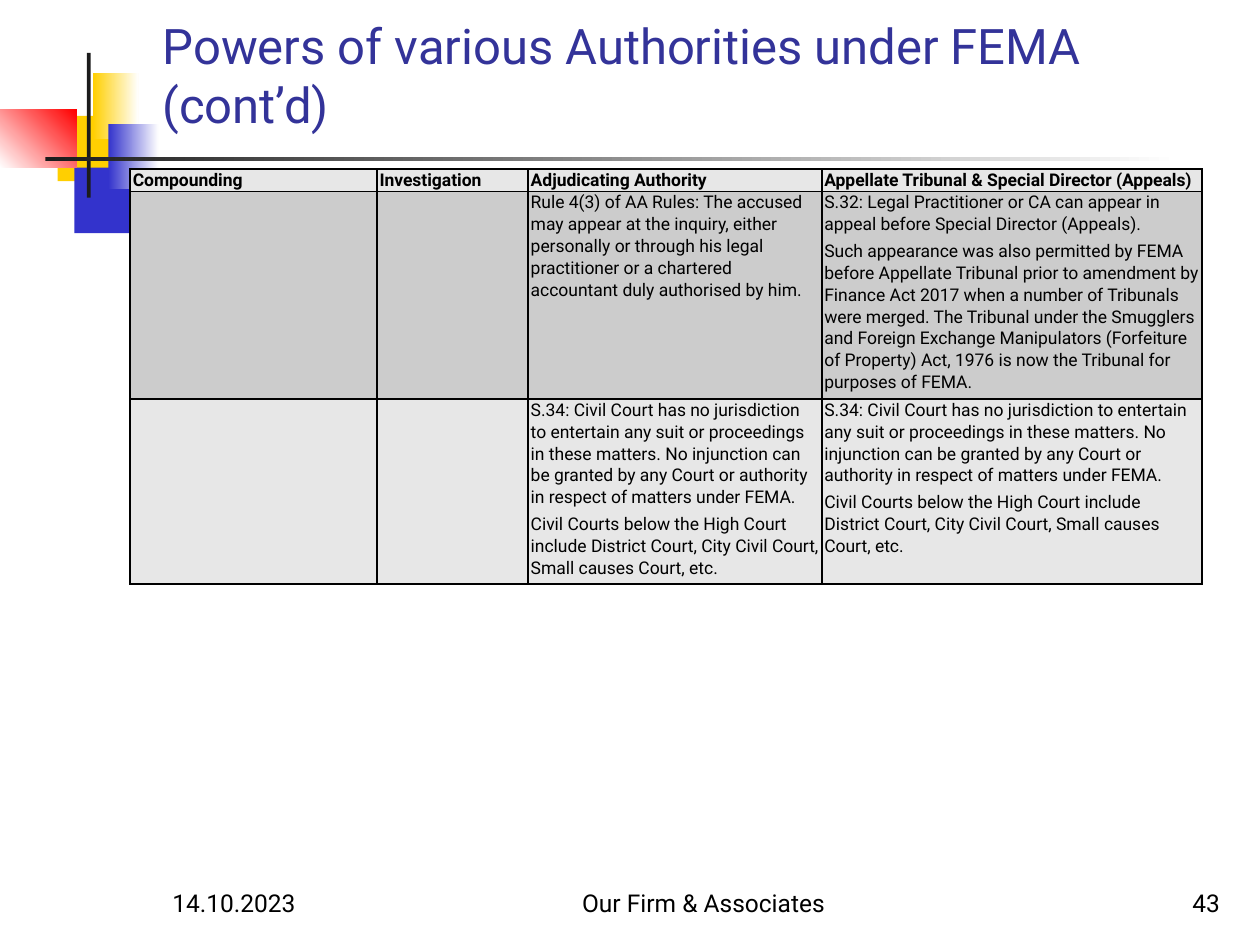
from lxml.etree import SubElement
from pptx import Presentation
from pptx.dml.color import RGBColor
from pptx.enum.shapes import MSO_SHAPE
from pptx.enum.text import MSO_ANCHOR, MSO_AUTO_SIZE, PP_ALIGN
from pptx.oxml.ns import qn
from pptx.util import Pt

FONT = "Roboto"
BLACK, WHITE, DARK = "000000", "FFFFFF", "1C1C1C"
GOLD, BLUE, RED = "FFCF01", "3333CC", "FF0000"

BLOCKS = [
    (33, 66.2, 34.6, 37.4, GOLD),
    (42.5, 95.8, 33.1, 37.4, BLUE),
    (53.3, 41.8, 25.9, 37.4, GOLD, WHITE),
    (61.9, 70.6, 28.8, 37.4, BLUE, WHITE),
    (0, 62.6, 43.9, 33.1, WHITE, RED, 45),
    (49.7, 30.2, 2.2, 82.8, DARK),
    (25.9, 90, 648, 2.2, DARK, WHITE),
]

COURT = [
    "S.34: Civil Court has no jurisdiction to entertain any suit or proceedings in these matters. "
    "No injunction can be granted by any Court or authority in respect of matters under FEMA.",
    "Civil Courts below the High Court include District Court, City Civil Court, "
    "Small causes Court, etc.",
]
ROWS = [
    [["Compounding"], ["Investigation"], ["Adjudicating Authority"],
     ["Appellate Tribunal & Special Director (Appeals)"]],
    [[], [],
     ["Rule 4(3) of AA Rules: The accused may appear at the inquiry, either personally or "
      "through his legal practitioner or a chartered accountant duly authorised by him."],
     ["S.32: Legal Practitioner or CA can appear in appeal before Special Director (Appeals).",
      "Such appearance was also permitted by FEMA before Appellate Tribunal prior to amendment by "
      "Finance Act 2017 when a number of Tribunals were merged. The Tribunal under the Smugglers "
      "and Foreign Exchange Manipulators (Forfeiture of Property) Act, 1976 is now the Tribunal "
      "for purposes of FEMA."]],
    [[], [], COURT, COURT],
]
WIDTHS = [141, 86.4, 167.8, 217.2]
HEIGHTS = [11, 83, 61]
FILLS = ["E7E7E7", "CCCCCC", "E7E7E7"]


def color(code):
    return RGBColor.from_string(code)


def style(para, size, code=BLACK, bold=False):
    font = para.font
    font.name, font.size, font.bold = FONT, Pt(size), bold
    font.color.rgb = color(code)


def add_block(slide, left, top, width, height, start, end=None, angle=0):
    block = slide.shapes.add_shape(
        MSO_SHAPE.RECTANGLE, Pt(left), Pt(top), Pt(width), Pt(height))
    block.shadow.inherit = False
    block.line.fill.background()
    if end is None:
        block.fill.solid()
        block.fill.fore_color.rgb = color(start)
        return
    block.fill.gradient()
    block.fill.gradient_angle = angle
    for stop, code, spot in zip(block.fill.gradient_stops, (start, end), (0, 1)):
        stop.color.rgb = color(code)
        stop.position = spot


def set_title(slide, text):
    title = slide.shapes.title
    title.left, title.top, title.width, title.height = Pt(85.7), Pt(12.2), Pt(634.3), Pt(67.7)
    frame = title.text_frame
    frame.text = text
    frame.auto_size = MSO_AUTO_SIZE.NONE
    frame.vertical_anchor = MSO_ANCHOR.BOTTOM
    para = frame.paragraphs[0]
    para.alignment = PP_ALIGN.LEFT
    style(para, 28, "333399")


def add_foot(slide, left, width, text, align):
    frame = slide.shapes.add_textbox(Pt(left), Pt(491.8), Pt(width), Pt(36)).text_frame
    frame.word_wrap = True
    frame.vertical_anchor = MSO_ANCHOR.BOTTOM
    frame.text = text
    para = frame.paragraphs[0]
    para.alignment = align
    style(para, 14)


def add_edges(cell):
    props = cell._tc.get_or_add_tcPr()
    for side in ("a:lnL", "a:lnR", "a:lnT", "a:lnB"):
        edge = SubElement(props, qn(side), w=str(Pt(1)))
        SubElement(SubElement(edge, qn("a:solidFill")), qn("a:srgbClr"), val=BLACK)


def fill_cell(cell, texts, code, bold):
    add_edges(cell)
    cell.fill.solid()
    cell.fill.fore_color.rgb = color(code)
    cell.margin_left = cell.margin_right = Pt(1.5)
    cell.margin_top = cell.margin_bottom = 0
    frame = cell.text_frame
    frame.text = "\n".join(texts)
    for para in frame.paragraphs:
        para.line_spacing = 1.07
        para.space_after = Pt(3)
        style(para, 10, bold=bold)


def add_grid(slide):
    table = slide.shapes.add_table(
        len(ROWS), len(WIDTHS), Pt(74.4), Pt(96.5),
        Pt(sum(WIDTHS)), Pt(sum(HEIGHTS))).table
    for col, width in zip(table.columns, WIDTHS):
        col.width = Pt(width)
    for i, (row, height) in enumerate(zip(table.rows, HEIGHTS)):
        row.height = Pt(height)
        for cell, texts in zip(row.cells, ROWS[i]):
            fill_cell(cell, texts, FILLS[i], i == 0)


def main():
    deck = Presentation()
    deck.slide_width, deck.slide_height = Pt(720), Pt(540)
    slide = deck.slides.add_slide(deck.slide_layouts[5])
    for block in BLOCKS:
        add_block(slide, *block)
    set_title(slide, "Powers of various Authorities under FEMA (cont’d)")
    add_foot(slide, 91.4, 149.8, "14.10.2023", PP_ALIGN.LEFT)
    add_foot(slide, 554.4, 149.8, "43", PP_ALIGN.RIGHT)
    add_foot(slide, 288, 228.2, "Our Firm & Associates", PP_ALIGN.CENTER)
    add_grid(slide)
    deck.save("out.pptx")


if __name__ == "__main__":
    main()
